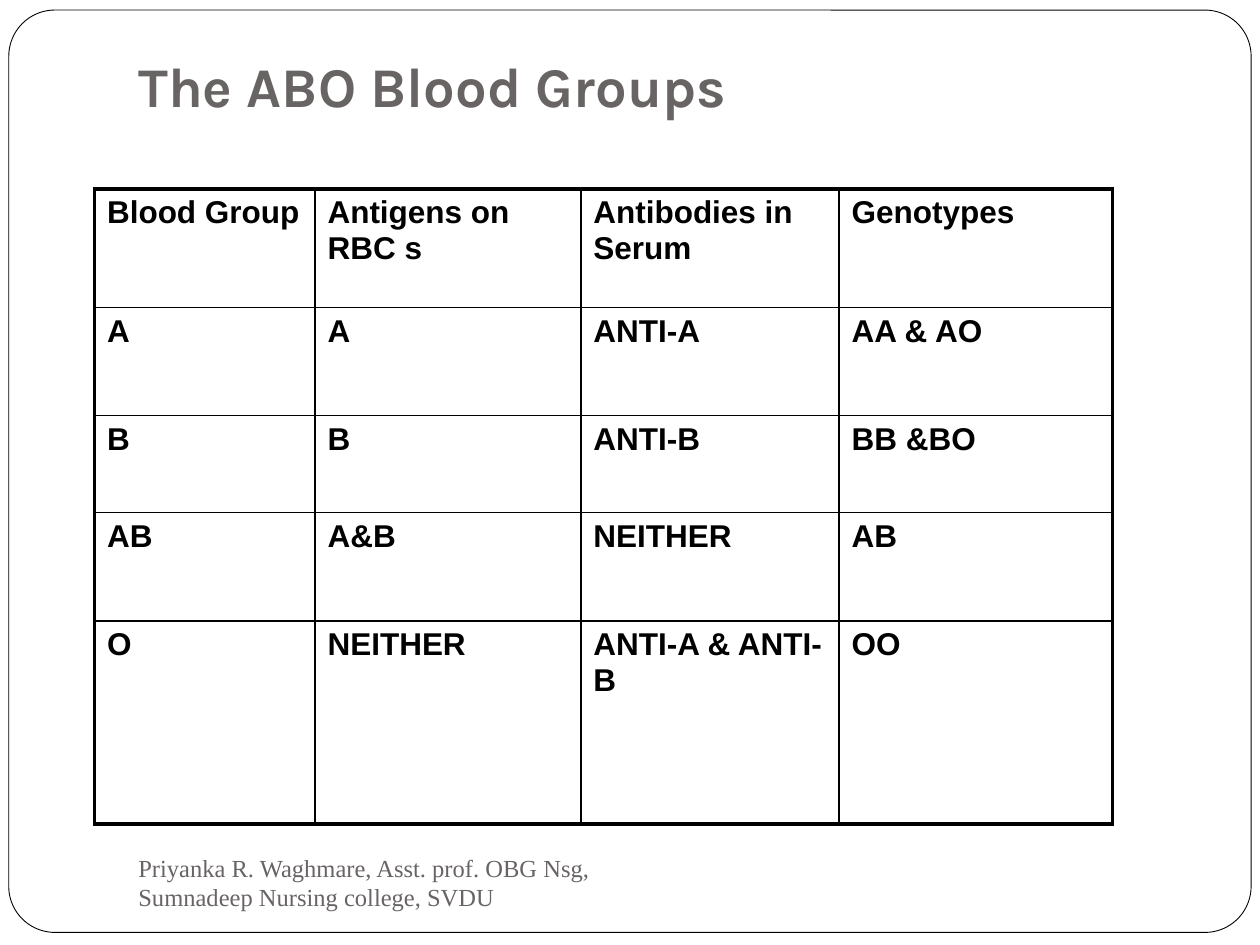
from dataclasses import dataclass

from lxml.etree import SubElement
from pptx import Presentation
from pptx.dml.color import RGBColor
from pptx.enum.shapes import MSO_SHAPE
from pptx.enum.text import MSO_ANCHOR
from pptx.oxml.ns import qn
from pptx.util import Inches, Pt


@dataclass(frozen=True)
class Theme:
    white: str = "FFFFFF"
    black: str = "000000"
    gray: str = "696464"
    title_font: str = "Karla"
    table_font: str = "Arial"
    footer_font: str = "Times New Roman"
    title_size: int = 32
    table_size: int = 18
    footer_size: int = 14
    frame_line: float = 0.5
    inner_line: float = 1
    outer_line: float = 2.25


THEME = Theme()

COLUMN_WIDTHS = [1.75, 2.11, 2.05, 2.17]
ROW_HEIGHTS = [0.94, 0.86, 0.77, 0.86, 1.61]
BLOOD_GROUPS = [
    ["Blood Group", "Antigens on RBC s", "Antibodies in Serum", "Genotypes"],
    ["A", "A", "ANTI-A", "AA & AO"],
    ["B", "B", "ANTI-B", "BB &BO"],
    ["AB", "A&B", "NEITHER", "AB"],
    ["O", "NEITHER", "ANTI-A & ANTI-B", "OO"],
]


def style_text(text_frame, font_name, size, color, bold=False):
    for paragraph in text_frame.paragraphs:
        for run in paragraph.runs:
            run.font.name = font_name
            run.font.size = Pt(size)
            run.font.bold = bold
            run.font.color.rgb = RGBColor.from_string(color)


def add_frame(slide, left, top, width, height):
    frame = slide.shapes.add_shape(
        MSO_SHAPE.ROUNDED_RECTANGLE, left, top, width, height)
    frame.adjustments[0] = 0.05
    frame.shadow.inherit = False
    frame.fill.solid()
    frame.fill.fore_color.rgb = RGBColor.from_string(THEME.white)
    frame.line.color.rgb = RGBColor.from_string(THEME.black)
    frame.line.width = Pt(THEME.frame_line)


def add_text(slide, box, text, anchor):
    text_frame = slide.shapes.add_textbox(*box).text_frame
    text_frame.word_wrap = True
    text_frame.vertical_anchor = anchor
    text_frame.text = text
    return text_frame


def add_title(slide, *box):
    text_frame = add_text(slide, box, "The ABO Blood Groups", MSO_ANCHOR.TOP)
    text_frame.margin_top = Inches(0.11)
    style_text(text_frame, THEME.title_font, THEME.title_size, THEME.gray, bold=True)


def add_footer(slide, *box):
    text_frame = add_text(
        slide, box,
        "Priyanka R. Waghmare, Asst. prof. OBG Nsg, Sumnadeep Nursing college, SVDU",
        MSO_ANCHOR.MIDDLE)
    style_text(text_frame, THEME.footer_font, THEME.footer_size, THEME.gray)


def set_borders(cell, outer_sides):
    """Draw all four borders, heavier on the table's outer edge."""
    properties = cell._tc.get_or_add_tcPr()
    for side in "LRTB":
        width = THEME.outer_line if side in outer_sides else THEME.inner_line
        line = SubElement(properties, qn(f"a:ln{side}"), w=str(Pt(width)))
        fill = SubElement(line, qn("a:solidFill"))
        SubElement(fill, qn("a:srgbClr"), val=THEME.black)


def add_blood_table(slide, left, top, width, height):
    table = slide.shapes.add_table(
        len(ROW_HEIGHTS), len(COLUMN_WIDTHS), left, top, width, height).table
    table.first_row = table.horz_banding = False
    for column, column_width in zip(table.columns, COLUMN_WIDTHS):
        column.width = Inches(column_width)
    for row, row_height in zip(table.rows, ROW_HEIGHTS):
        row.height = Inches(row_height)

    last_row, last_column = len(ROW_HEIGHTS) - 1, len(COLUMN_WIDTHS) - 1
    for r, texts in enumerate(BLOOD_GROUPS):
        for c, text in enumerate(texts):
            cell = table.cell(r, c)
            cell.text = text
            style_text(cell.text_frame, THEME.table_font, THEME.table_size,
                       THEME.black, bold=True)
            edges = {"L": c == 0, "R": c == last_column,
                     "T": r == 0, "B": r == last_row}
            set_borders(cell, [side for side, outer in edges.items() if outer])
            cell.fill.background()


def main():
    presentation = Presentation()
    presentation.slide_width = Inches(10)
    presentation.slide_height = Inches(7.5)
    slide = presentation.slides.add_slide(presentation.slide_layouts[6])

    # Page frame
    add_frame(slide, Inches(0.07), Inches(0.08), Inches(9.86), Inches(7.32))
    # Heading
    add_title(slide, Inches(1), Inches(0.3), Inches(8.5), Inches(1.25))
    # Blood group table
    add_blood_table(slide, Inches(0.75), Inches(1.5),
                    Inches(sum(COLUMN_WIDTHS)), Inches(sum(ROW_HEIGHTS)))
    # Author line
    add_footer(slide, Inches(1), Inches(6.75), Inches(4.33), Inches(0.5))

    presentation.save("out.pptx")


if __name__ == "__main__":
    main()
